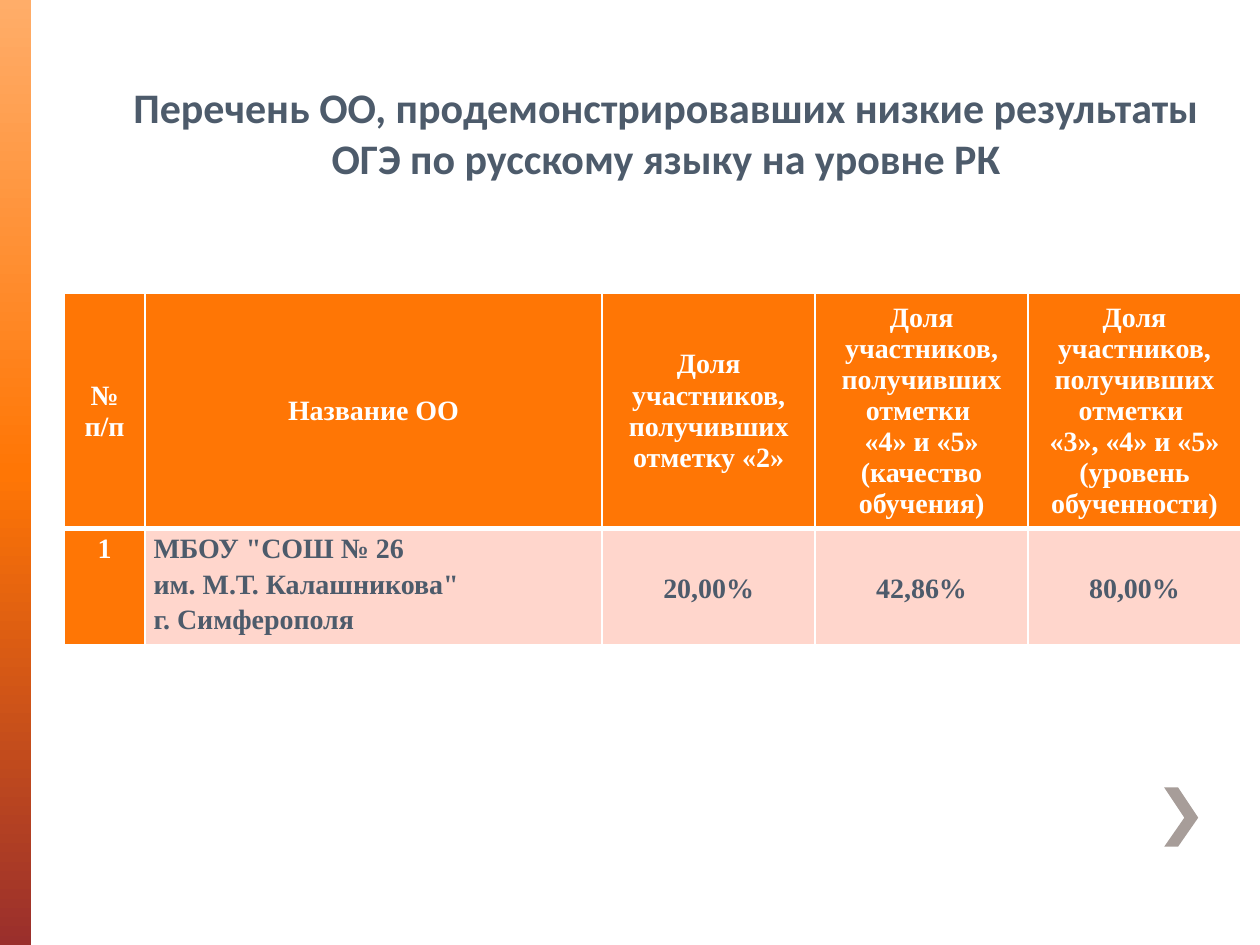
from copy import deepcopy

from lxml.etree import SubElement
from pptx import Presentation
from pptx.dml.color import RGBColor
from pptx.enum.shapes import MSO_SHAPE as Shape
from pptx.enum.text import MSO_ANCHOR as Anchor, PP_ALIGN as Align
from pptx.oxml.ns import qn
from pptx.util import Inches, Pt

COLORS = {
    "white": "FFFFFF", "orange": "FF7605", "peach": "FFAD69", "wine": "9A2F2C",
    "pink": "FFD6CC", "slate": "4D5B6B", "taupe": "A79D99",
}
TITLE = "Перечень ОО, продемонстрировавших низкие результаты ОГЭ по русскому языку на уровне РК"
WIDTHS = [0.64, 3.63, 1.69, 1.69, 1.69]
HEIGHTS = [1.86, 0.9]
ROWS = [
    ["№ п/п", "Название ОО", "Доля участников, получивших отметку «2»",
     "Доля участников, получивших отметки \n«4» и «5» (качество обучения)",
     "Доля участников, получивших отметки \n«3», «4» и «5» (уровень обученности)"],
    ["1", 'МБОУ "СОШ № 26 \vим. М.Т. Калашникова"\vг. Симферополя',
     "20,00%", "42,86%", "80,00%"],
]
CHEVRON = [(9.35, 6.25), (9.24, 6.25), (9.4, 6.49), (9.24, 6.72), (9.35, 6.72), (9.51, 6.49)]


def rgb(name):
    return RGBColor.from_string(COLORS[name])


def apply(target, values):
    for name, value in values.items():
        setattr(target, name, value)


class Painter:
    """Draws styled elements on the current page."""

    def __init__(self, page):
        self.page = page
        self.title_font = {"name": "Calibri", "size": Pt(24), "bold": True}
        self.table_font = {"name": "Times New Roman", "size": Pt(16), "bold": True}
        self.cell_format = {"margin_left": Inches(0.07), "margin_right": Inches(0.07),
                            "margin_top": 0, "margin_bottom": 0}

    def text(self, frame, words, font, color, **layout):
        frame.text = words
        for para in frame.paragraphs:
            apply(para, layout)
            for span in para.runs:
                apply(span.font, font)
                span.font.color.rgb = rgb(color)
            for line_break in para._p.findall(qn("a:br")):
                SubElement(line_break, qn("a:rPr"), sz=str(int(font["size"].pt * 100)))

    def gradient_bar(self, left, top, width, height, stops):
        bar = self.page.shapes.add_shape(
            Shape.RECTANGLE, Inches(left), Inches(top), Inches(width), Inches(height))
        bar.shadow.inherit = False
        bar.line.fill.background()
        bar.fill.gradient()
        bar.fill.gradient_angle = 270
        stop_list = bar.element.spPr.find(qn("a:gradFill")).find(qn("a:gsLst"))
        stop_list.append(deepcopy(stop_list[0]))
        for stop, (position, color) in zip(bar.fill.gradient_stops, stops):
            stop.color.rgb = rgb(color)
            stop.position = position

    def outline(self, points, color):
        corners = [(Inches(x), Inches(y)) for x, y in points]
        builder = self.page.shapes.build_freeform(*corners[0])
        builder.add_line_segments(corners[1:], close=True)
        shape = builder.convert_to_shape()
        shape.shadow.inherit = False
        shape.line.fill.background()
        shape.fill.solid()
        shape.fill.fore_color.rgb = rgb(color)

    def title(self, left, top, width, height, words):
        box = self.page.shapes.add_textbox(
            Inches(left), Inches(top), Inches(width), Inches(height))
        apply(box.text_frame, {"word_wrap": True, "margin_left": Inches(0.6)})
        self.text(box.text_frame, words, self.title_font, "slate", alignment=Align.CENTER)

    def border(self, cell, widths):
        properties = cell._tc.get_or_add_tcPr()
        for side, width in widths.items():
            line = SubElement(properties, qn(f"a:ln{side}"), w=str(Pt(width)))
            fill = SubElement(line, qn("a:solidFill"))
            SubElement(fill, qn("a:srgbClr"), val=COLORS["white"])

    def table(self, left, top, widths, heights, rows):
        table = self.page.shapes.add_table(
            len(rows), len(widths), Inches(left), Inches(top),
            Inches(sum(widths)), Inches(sum(heights))).table
        for column, width in zip(table.columns, widths):
            column.width = Inches(width)
        for row, height in zip(table.rows, heights):
            row.height = Inches(height)
        for r, texts in enumerate(rows):
            for c, words in enumerate(texts):
                self.cell(table.cell(r, c), words, r == 0, c)

    def cell(self, cell, words, header, column):
        accent = header or column == 0
        middle = header or column > 1
        apply(cell, self.cell_format)
        cell.vertical_anchor = Anchor.MIDDLE if middle else Anchor.TOP
        self.border(cell, {"L": 1, "R": 1, "T": 1 if header else 3, "B": 3 if header else 1})
        cell.fill.solid()
        cell.fill.fore_color.rgb = rgb("orange" if accent else "pink")
        self.text(cell.text_frame, words, self.table_font, "white" if accent else "slate",
                  alignment=Align.CENTER if accent or middle else Align.LEFT,
                  line_spacing=1.0 if header else 1.15)


def main():
    deck = Presentation()
    apply(deck, {"slide_width": Inches(10), "slide_height": Inches(7.5)})
    painter = Painter(deck.slides.add_slide(deck.slide_layouts[6]))
    painter.gradient_bar(0, 0, 0.25, 7.5, [(0, "peach"), (0.5, "orange"), (1, "wine")])
    painter.outline(CHEVRON, "taupe")
    painter.title(0.35, 0.6, 9.37, 0.91, TITLE)
    painter.table(0.51, 2.33, WIDTHS, HEIGHTS, ROWS)
    deck.save("out.pptx")


if __name__ == "__main__":
    main()
